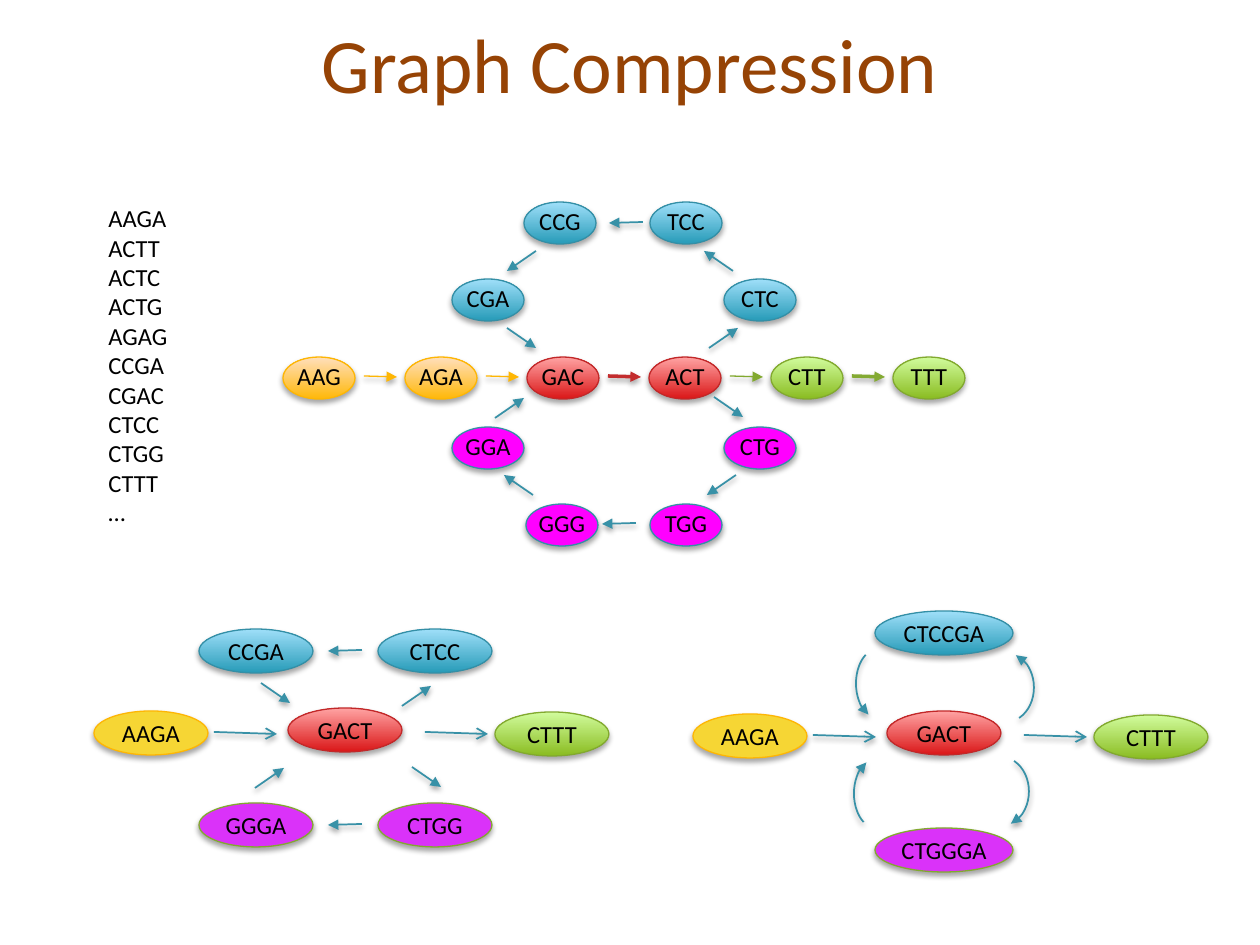
from lxml import etree
from pptx import Presentation
from pptx.dml.color import RGBColor
from pptx.enum.shapes import MSO_CONNECTOR, MSO_SHAPE
from pptx.enum.text import MSO_ANCHOR, PP_ALIGN
from pptx.oxml.ns import qn
from pptx.util import Pt

PX = 914400 // 126
FONT = "Calibri"
ELLIPSE, ARC = MSO_SHAPE.OVAL, MSO_SHAPE.ARC
STRAIGHT = MSO_CONNECTOR.STRAIGHT
CENTER, LEFT = PP_ALIGN.CENTER, PP_ALIGN.LEFT
MIDDLE, TOP = MSO_ANCHOR.MIDDLE, MSO_ANCHOR.TOP

COLORS = {
    "title": "964305", "text": "000000", "edge": "3891A7",
    "orange": "FEB604", "red": "C32D2E", "green": "82A92F", "deep_green": "84AA33",
}
# Node style: fill colours from bottom to top, then outline
NODES = {
    "blue": (("279BB8", "9FDFF9"), "348FA6"),
    "orange": (("FFB809", "FFDFBC"), "FEB604"),
    "red": (("DA1718", "FFA3A3"), "C22829"),
    "green": (("8ABC21", "D1FC9D"), "82A92F"),
    "magenta": (("FF00FF",), "348FA6"),
    "yellow": (("F6D634",), "FEB604"),
    "violet": (("DA32F9",), "82A92F"),
}
READS = ["AAGA", "ACTT", "ACTC", "ACTG", "AGAG", "CCGA",
         "CGAC", "CTCC", "CTGG", "CTTT", "…"]
SMALL, MEDIUM, WIDE = (72, 42), (114, 44), (138, 44)
ROW_STEP = 122

ROW = [("AAG", "orange"), ("AGA", "orange"), ("GAC", "red"),
       ("ACT", "red"), ("CTT", "green"), ("TTT", "green")]
ROW_EDGES = [("orange", 0.75), ("orange", 0.75), ("red", 2),
             ("green", 0.75), ("deep_green", 2)]
RING = [("CTC", 760, 300, "blue"), ("CGA", 488, 300, "blue"),
        ("TCC", 686, 223, "blue"), ("CCG", 560, 223, "blue"),
        ("GGA", 488, 448, "magenta"), ("CTG", 760, 448, "magenta"),
        ("GGG", 562, 525, "magenta"), ("TGG", 686, 525, "magenta")]
# Diagonal edges: start point, then direction across and down
RING_DIAGONALS = [(709, 348, 1, -1), (507, 328, 1, 1), (736, 475, -1, 1),
                  (533, 495, -1, -1), (536, 251, -1, 1), (733, 271, -1, -1),
                  (495, 418, 1, -1), (714, 397, 1, 1)]
MERGED_DIAGONALS = [(402, 706, 1, -1), (261, 683, 1, 1),
                    (412, 767, 1, 1), (255, 788, 1, -1)]
ARCS = [(978, 653, 56, ("flipV",)), (856, 649, 44, ("flipH",)),
        (973, 757, 56, ()), (854, 759, 44, ("flipH", "flipV"))]


def rgb(hex_color):
    return RGBColor.from_string(hex_color)


def add_shadow(sp):
    effects = etree.SubElement(sp.element.spPr, qn("a:effectLst"))
    shadow = etree.SubElement(effects, qn("a:outerShdw"), blurRad=str(Pt(3.1)),
                              dist=str(Pt(1.8)), dir="5400000", rotWithShape="0")
    color = etree.SubElement(shadow, qn("a:srgbClr"), val="000000")
    etree.SubElement(color, qn("a:alpha"), val="35000")


def style_edge(sp, color, width, head="triangle"):
    """Set the line, its arrowhead and its shadow."""
    sp.line.color.rgb = rgb(COLORS[color])
    sp.line.width = Pt(width)
    ln = sp.element.spPr.find(qn("a:ln"))
    etree.SubElement(ln, qn("a:tailEnd"), type=head)
    add_shadow(sp)


def add_text(shapes, lines, box, size, color, align, anchor):
    tf = shapes.add_textbox(*(v * PX for v in box)).text_frame
    tf.word_wrap = True
    tf.vertical_anchor = anchor
    tf.text = "\n".join(lines)
    for p in tf.paragraphs:
        p.alignment = align
        p.font.size, p.font.name = Pt(size), FONT
        p.font.color.rgb = rgb(COLORS[color])


def add_node(shapes, label, x, y, style, size, lift=0):
    """Draw a labelled ellipse centred on x, y; lift raises the label."""
    w, h = size
    sp = shapes.add_shape(ELLIPSE, (x - w // 2) * PX, (y - h // 2) * PX, w * PX, h * PX)
    fills, outline = NODES[style]
    if len(fills) == 1:
        sp.fill.solid()
        sp.fill.fore_color.rgb = rgb(fills[0])
    else:
        sp.fill.gradient()
        sp.fill.gradient_angle = 90
        for stop, color in zip(sp.fill.gradient_stops, fills):
            stop.color.rgb = rgb(color)
    sp.line.color.rgb = rgb(outline)
    sp.line.width = Pt(0.75)
    add_shadow(sp)
    tf = sp.text_frame
    tf.word_wrap = False
    tf.margin_left = tf.margin_right = tf.margin_top = 0
    tf.margin_bottom = 2 * lift * PX
    tf.vertical_anchor = MIDDLE
    p = tf.paragraphs[0]
    p.text, p.alignment = label, CENTER
    p.font.size, p.font.name = Pt(14), FONT
    p.font.color.rgb = rgb(COLORS["text"])


def add_edge(shapes, x, y, dx, dy, color="edge", width=1, head="triangle"):
    c = shapes.add_connector(STRAIGHT, x * PX, y * PX, (x + dx) * PX, (y + dy) * PX)
    style_edge(c, color, width, head)


def add_diagonals(shapes, diagonals):
    for x, y, across, down in diagonals:
        add_edge(shapes, x, y, 29 * across, 20 * down)


def add_arc(shapes, x, y, w, flips):
    sp = shapes.add_shape(ARC, x * PX, y * PX, w * PX, 69 * PX)
    sp.adjustments[0], sp.adjustments[1] = 175.96, 43.75
    for flip in flips:
        sp.element.spPr.xfrm.set(flip, "1")
    sp.fill.background()
    style_edge(sp, "edge", 1)


def add_spine(shapes, dx=0, dy=0):
    """Draw the AAGA, GACT, CTTT path shared by both compressed graphs."""
    for x in (214, 425):
        add_edge(shapes, x + dx, 732 + dy, 63, 2, head="arrow")
    for label, x, y, style in [("AAGA", 151, 733, "yellow"), ("GACT", 345, 730, "red"),
                               ("CTTT", 552, 734, "green")]:
        add_node(shapes, label, x + dx, y + dy, style, MEDIUM)


def draw_full_graph(shapes):
    for label, x, y, style in RING:
        add_node(shapes, label, x, y, style, SMALL, lift=2)
    for i, (label, style) in enumerate(ROW):
        add_node(shapes, label, 319 + i * ROW_STEP, 378, style, SMALL, lift=2)
    for i, (color, width) in enumerate(ROW_EDGES):
        add_edge(shapes, 364 + i * ROW_STEP, 376, 33, 1, color, width)
    add_diagonals(shapes, RING_DIAGONALS)
    add_edge(shapes, 643, 222, -34, 1)
    add_edge(shapes, 636, 523, -34, 1)


def draw_merged_graph(shapes):
    add_spine(shapes)
    for y, style, labels in [(651, "blue", ("CCGA", "CTCC")),
                             (825, "violet", ("GGGA", "CTGG"))]:
        for x, label in zip((256, 435), labels):
            add_node(shapes, label, x, y, style, MEDIUM)
        add_edge(shapes, 362, y - 1, -34, 1)
    add_diagonals(shapes, MERGED_DIAGONALS)


def draw_final_graph(shapes):
    for arc in ARCS:
        add_arc(shapes, *arc)
    add_spine(shapes, 599, 3)
    add_node(shapes, "CTCCGA", 944, 633, "blue", WIDE)
    add_node(shapes, "CTGGGA", 944, 850, "violet", WIDE)


def main():
    prs = Presentation()
    prs.slide_width, prs.slide_height = 1260 * PX, 945 * PX
    shapes = prs.slides.add_slide(prs.slide_layouts[6]).shapes
    add_text(shapes, ["Graph Compression"], (63, 21, 1134, 84), 44, "title", CENTER, MIDDLE)
    add_text(shapes, READS, (96, 197, 156, 339), 14, "text", LEFT, TOP)
    for draw in (draw_full_graph, draw_final_graph, draw_merged_graph):
        draw(shapes.add_group_shape().shapes)
    prs.save("out.pptx")


if __name__ == "__main__":
    main()
